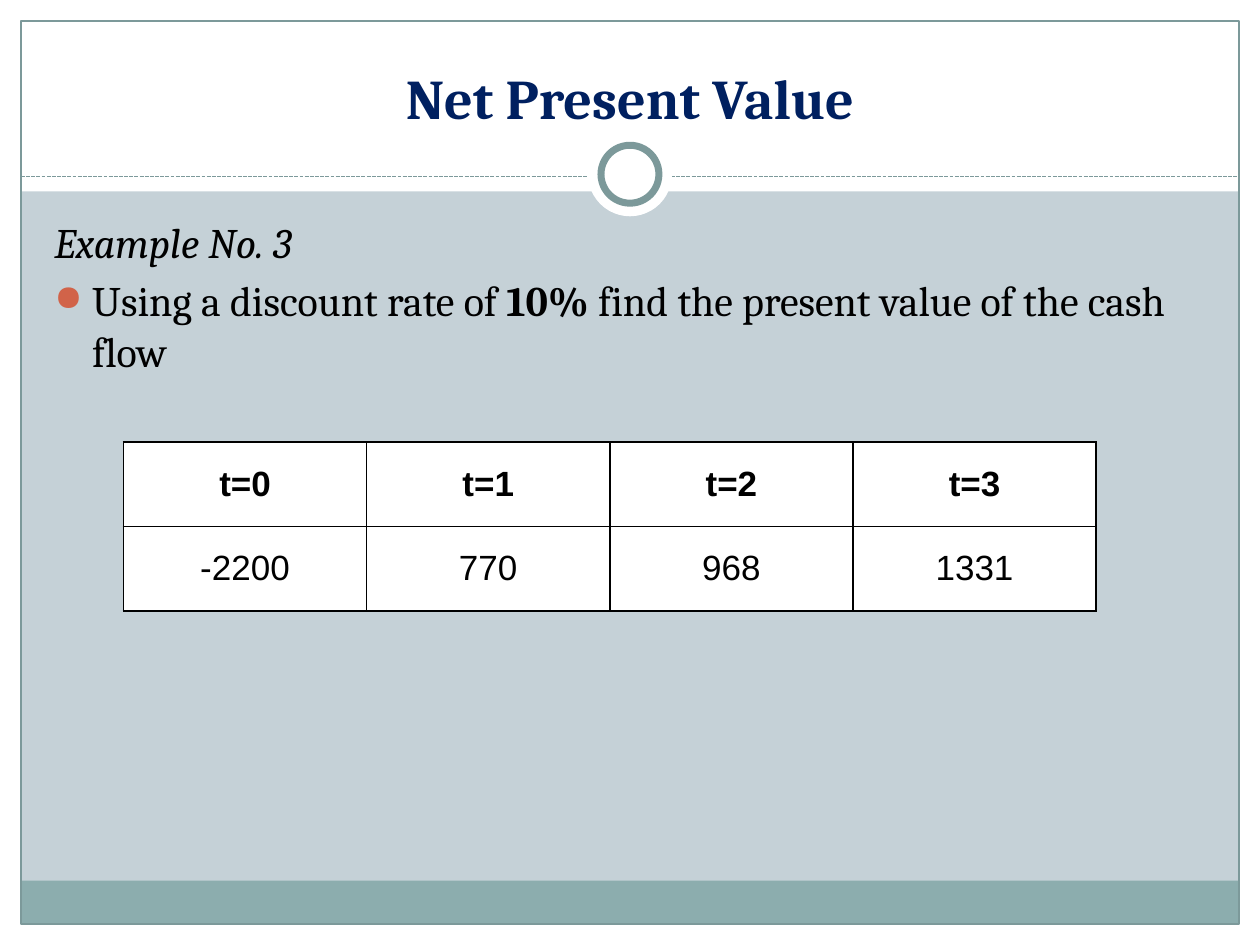
from dataclasses import dataclass

from lxml.etree import SubElement
from pptx import Presentation
from pptx.dml.color import RGBColor
from pptx.enum.dml import MSO_LINE
from pptx.enum.shapes import MSO_CONNECTOR, MSO_SHAPE
from pptx.enum.text import MSO_ANCHOR as Anchor, PP_ALIGN as Align
from pptx.oxml.ns import qn
from pptx.util import Emu, Inches, Pt

COLUMNS, ROWS = 60, 45
UNIT = Inches(10) / COLUMNS


@dataclass(frozen=True)
class Theme:
    """Colours, fonts and type sizes of the slide."""
    background: str = "C5D1D7"
    white: str = "FFFFFF"
    black: str = "000000"
    band: str = "8CADAE"
    rule: str = "7C999A"
    heading: str = "002060"
    bullet: str = "D16349"
    text_font: str = "Cambria"
    table_font: str = "Arial"
    title_size: float = 32
    body_size: float = 24
    table_size: float = 20
    thin: float = 0.75
    ring: float = 4
    border: float = 1


THEME = Theme()


@dataclass(frozen=True)
class Box:
    """A rectangle measured in grid columns and rows."""
    left: float
    top: float
    width: float
    height: float

    def inner(self, left, top, width, height):
        """Return a box placed relative to this one's corner."""
        return Box(self.left + left, self.top + top, width, height)

    def place(self):
        """Return left, top, width and height as slide lengths."""
        return [Emu(round(value * UNIT)) for value in
                (self.left, self.top, self.width, self.height)]


def colour(code):
    """Turn a hex code into a colour."""
    return RGBColor.from_string(code)


def style_font(font, name, size, code, bold=False, italic=None):
    """Set every property of a font."""
    font.name, font.size, font.bold, font.italic = name, Pt(size), bold, italic
    font.color.rgb = colour(code)


def add_plain_shape(slide, kind, box, fill=None, line_width=None):
    """Add a flat shape with an optional fill and outline."""
    shape = slide.shapes.add_shape(kind, *box.place())
    shape.shadow.inherit = False
    if fill:
        shape.fill.solid()
        shape.fill.fore_color.rgb = colour(fill)
    else:
        shape.fill.background()
    if line_width:
        shape.line.color.rgb = colour(THEME.rule)
        shape.line.width = Pt(line_width)
    else:
        shape.line.fill.background()


def add_text_frame(slide, box, anchor):
    """Add a wrapping text box and return its text frame."""
    frame = slide.shapes.add_textbox(*box.place()).text_frame
    frame.word_wrap = True
    frame.vertical_anchor = anchor
    return frame


def add_backdrop(slide, box):
    """Draw the white margins, the footer band and the frame."""
    slide.background.fill.solid()
    slide.background.fill.fore_color.rgb = colour(THEME.background)
    width, height = box.width, box.height
    margins = [(0, height - 1, width, 1), (0, 0, width, 9.12),
               (0, 0, 1, height), (width - 1, 0, 1, height)]
    for margin in margins:
        add_plain_shape(slide, MSO_SHAPE.RECTANGLE, box.inner(*margin), THEME.white)
    add_plain_shape(slide, MSO_SHAPE.RECTANGLE,
                    box.inner(1, height - 3.06, width - 2, 2.06), THEME.band)
    add_plain_shape(slide, MSO_SHAPE.RECTANGLE,
                    box.inner(1, 1, width - 2, height - 2), line_width=THEME.thin)


def add_divider(slide, box):
    """Draw the dashed rule with the ring in its middle."""
    left, top, width, height = box.place()
    y = top + height // 2
    rule = slide.shapes.add_connector(MSO_CONNECTOR.STRAIGHT, left, y, left + width, y)
    rule.line.color.rgb = colour(THEME.rule)
    rule.line.width = Pt(THEME.thin)
    rule.line.dash_style = MSO_LINE.SQUARE_DOT
    SubElement(rule._element.spPr, qn("a:effectLst"))
    for diameter, line_width in ((4, None), (2.76, THEME.ring)):
        circle = box.inner((box.width - diameter) / 2,
                           (box.height - diameter) / 2 - 0.1, diameter, diameter)
        add_plain_shape(slide, MSO_SHAPE.OVAL, circle, THEME.white, line_width)


def add_title(slide, box, text):
    """Write the slide title at the bottom of its box."""
    paragraph = add_text_frame(slide, box, Anchor.BOTTOM).paragraphs[0]
    paragraph.text = text
    paragraph.alignment = Align.CENTER
    style_font(paragraph.font, THEME.text_font, THEME.title_size, THEME.heading, True)


def add_bullet(paragraph):
    """Give a paragraph a hanging round bullet."""
    properties = paragraph._p.get_or_add_pPr()
    properties.set("marL", str(Inches(0.3)))
    properties.set("indent", str(-Inches(0.3)))
    bullet_items = [SubElement(properties, qn(f"a:{name}"))
                    for name in ("buClr", "buSzPct", "buChar")]
    SubElement(bullet_items[0], qn("a:srgbClr"), val=THEME.bullet)
    bullet_items[1].set("val", "85000")
    bullet_items[2].set("char", "●")


def add_body(slide, box, example, task):
    """Write the example heading and its bulleted task."""
    frame = add_text_frame(slide, box, Anchor.TOP)
    heading, bullet = frame.paragraphs[0], frame.add_paragraph()
    heading.text = example
    for text, bold in task:
        run = bullet.add_run()
        run.text = text
        run.font.bold = bold
    bullet.space_before = heading.space_before = Pt(0.2 * THEME.body_size)
    add_bullet(bullet)
    for paragraph in (heading, bullet):
        style_font(paragraph.font, THEME.text_font, THEME.body_size, THEME.black,
                   None, paragraph is heading)


def add_borders(cell):
    """Draw all four borders of a table cell."""
    properties = cell._tc.get_or_add_tcPr()
    for side in ("lnL", "lnR", "lnT", "lnB"):
        line = SubElement(properties, qn(f"a:{side}"), w=str(Pt(THEME.border)))
        fill = SubElement(line, qn("a:solidFill"))
        SubElement(fill, qn("a:srgbClr"), val=THEME.black)


def add_cash_flows(slide, box, rows):
    """Add the cash flow table with a bold first row."""
    table = slide.shapes.add_table(len(rows), len(rows[0]), *box.place()).table
    table.first_row = table.horz_banding = False
    for row_index, row in enumerate(rows):
        for column_index, text in enumerate(row):
            cell = table.cell(row_index, column_index)
            add_borders(cell)
            cell.fill.solid()
            cell.fill.fore_color.rgb = colour(THEME.white)
            cell.vertical_anchor = Anchor.MIDDLE
            cell.margin_left = cell.margin_right = Inches(0.07)
            cell.margin_top = cell.margin_bottom = 0
            paragraph = cell.text_frame.paragraphs[0]
            paragraph.text = text
            paragraph.alignment = Align.CENTER
            style_font(paragraph.font, THEME.table_font, THEME.table_size,
                       THEME.black, row_index == 0)


def main():
    """Build the slide and save it."""
    presentation = Presentation()
    presentation.slide_width = Emu(round(COLUMNS * UNIT))
    presentation.slide_height = Emu(round(ROWS * UNIT))
    slide = presentation.slides.add_slide(presentation.slide_layouts[6])
    page = Box(0, 0, COLUMNS, ROWS)
    add_backdrop(slide, page)
    add_divider(slide, page.inner(1, 6.4, 58, 4))
    add_title(slide, page.inner(2, 1.5, 56, 5), "Net Present Value")
    add_body(slide, page.inner(2, 10, 55, 30), "Example No. 3",
             [("Using a discount rate of ", False), ("10%", True),
              (" find the present value of the cash flow", False)])
    add_cash_flows(slide, page.inner(5.88, 21.06, 46.32, 8.04),
                   [["t=0", "t=1", "t=2", "t=3"], ["-2200", "770", "968", "1331"]])
    presentation.save("out.pptx")


if __name__ == "__main__":
    main()
